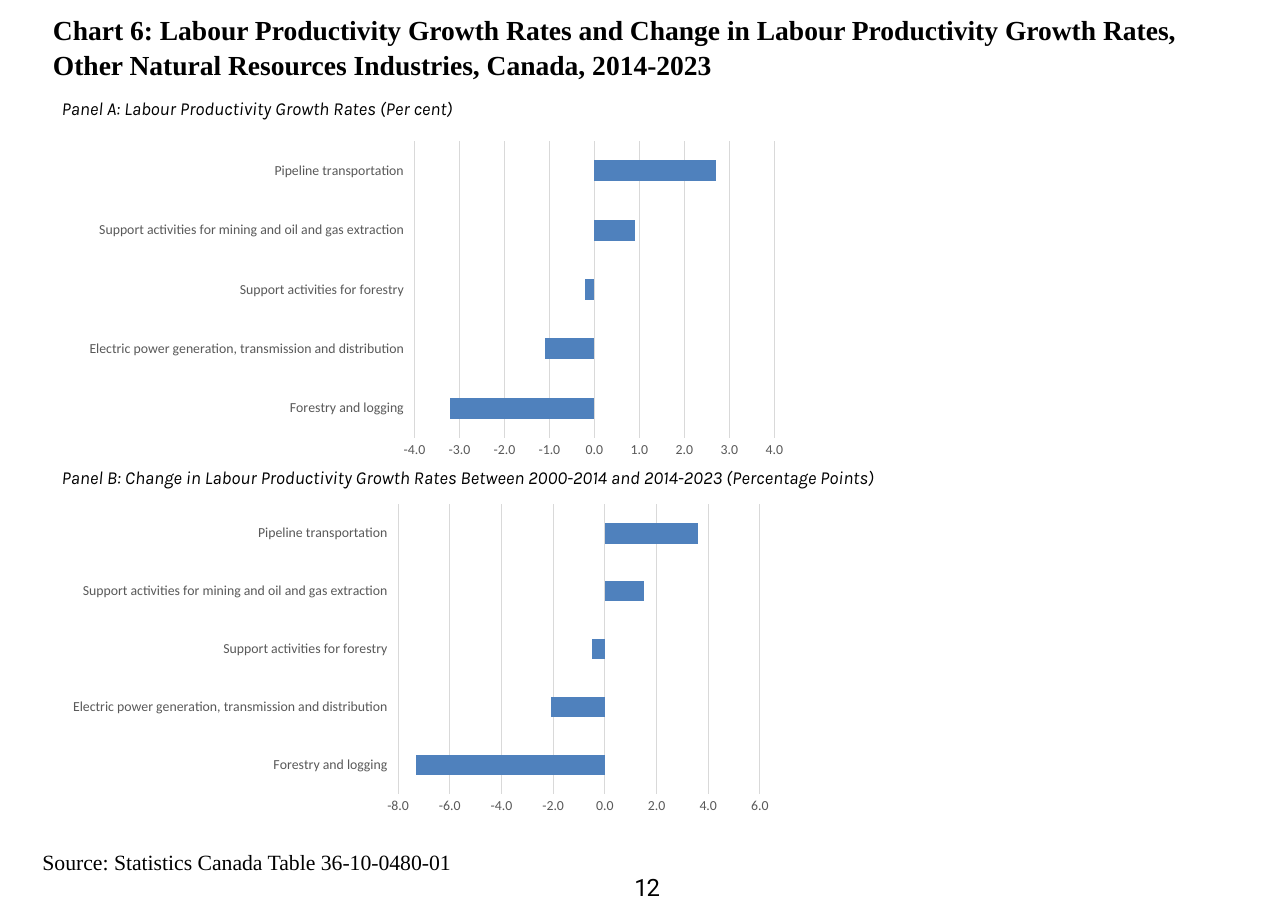
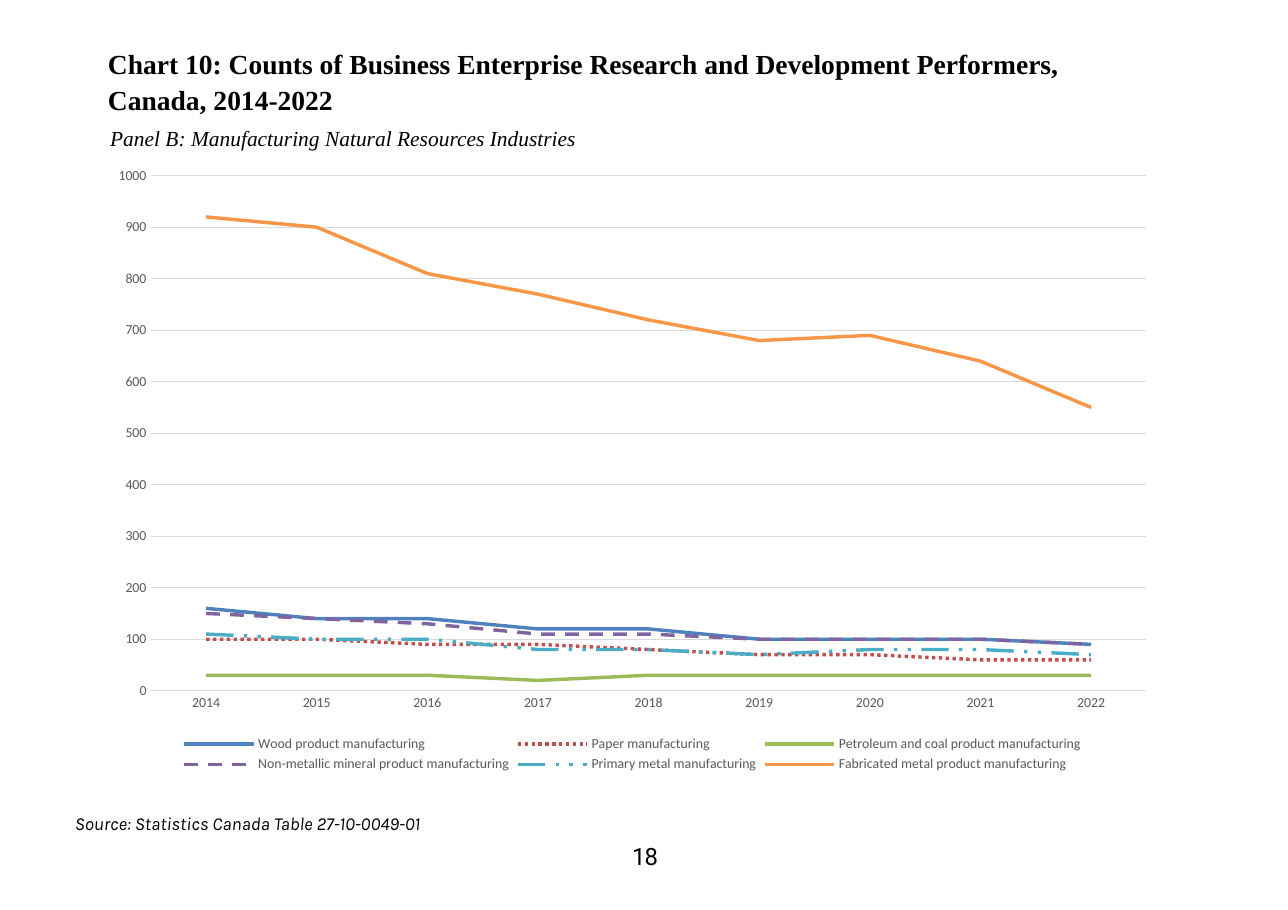
from pptx import Presentation
from pptx.chart.data import CategoryChartData
from pptx.dml.color import RGBColor
from pptx.enum.chart import XL_CHART_TYPE, XL_LEGEND_POSITION, XL_TICK_LABEL_POSITION, XL_TICK_MARK
from pptx.enum.dml import MSO_LINE
from pptx.enum.text import MSO_ANCHOR, MSO_AUTO_SIZE, PP_ALIGN
from pptx.util import Cm, Pt

BAR, LINE = XL_CHART_TYPE.BAR_CLUSTERED, XL_CHART_TYPE.LINE
LOW, NO_TICK = XL_TICK_LABEL_POSITION.LOW, XL_TICK_MARK.NONE
BOTTOM = XL_LEGEND_POSITION.BOTTOM
SOLID, DOT, DASH, DASH_DOTS = (MSO_LINE.SOLID, MSO_LINE.ROUND_DOT, MSO_LINE.DASH,
                               MSO_LINE.DASH_DOT_DOT)
TOP, LEFT, NO_FIT = MSO_ANCHOR.TOP, PP_ALIGN.LEFT, MSO_AUTO_SIZE.NONE

COLORS = {
    "text": "000000", "label": "595959", "grid": "D9D9D9", "background": "FFFFFF",
    "blue": "4F81BD", "red": "C0504D", "green": "9BBB59",
    "purple": "8064A2", "teal": "4BACC6", "orange": "F79646",
}
PALETTE = {name: RGBColor.from_string(value) for name, value in COLORS.items()}

# Font name, size, bold, italic, line spacing, letter spacing
TITLE = ("Times New Roman", 18, True, False, 1.07, 0)
PANEL = ("Karla", 12, False, True, 1.07, 0)
PANEL_SERIF = ("Times New Roman", 14, False, True, 1.07, 0)
SOURCE_SERIF = ("Times New Roman", 14.2, False, False, 1, 0)
PAGE_NUMBER = ("Roboto", 15.6, False, False, 1, -70)
PADDED, FLUSH = (0.25, 0.13), (0, 0.04)


def write(shape, box, text, style, inset):
    """Place a text shape, fill it and format its only paragraph."""
    shape.left, shape.top, shape.width, shape.height = (Cm(length) for length in box)
    font_name, size, bold, italic, line_spacing, letter_spacing = style
    frame = shape.text_frame
    frame.text = text
    frame.word_wrap = True
    frame.auto_size = NO_FIT
    frame.vertical_anchor = TOP
    frame.margin_left = frame.margin_right = Cm(inset[0])
    frame.margin_top = frame.margin_bottom = Cm(inset[1])
    paragraph = frame.paragraphs[0]
    paragraph.alignment = LEFT
    paragraph.line_spacing = line_spacing
    run = paragraph.runs[0]
    run.font.name, run.font.size = font_name, Pt(size)
    run.font.bold, run.font.italic = bold, italic
    run.font.color.rgb = PALETTE["text"]
    if letter_spacing:
        run.font._element.set("spc", str(letter_spacing))


def add_styled_chart(slide, kind, box, categories, series, value_range):
    """Add a chart with pale gridlines; value_range is minimum, maximum, step."""
    data = CategoryChartData()
    data.categories = categories
    for name, values in series:
        data.add_series(name, values)
    chart = slide.shapes.add_chart(kind, *(Cm(length) for length in box), data).chart
    chart.has_title = False
    chart.has_legend = False
    chart.font.name, chart.font.size = "Calibri", Pt(9)
    chart.font.color.rgb = PALETTE["label"]
    chart.plots[0].vary_by_categories = False
    value_axis, category_axis = chart.value_axis, chart.category_axis
    value_axis.minimum_scale, value_axis.maximum_scale, value_axis.major_unit = value_range
    value_axis.has_major_gridlines = True
    value_axis.format.line.fill.background()
    for axis in (value_axis, category_axis):
        axis.major_tick_mark = axis.minor_tick_mark = NO_TICK
    for line in (value_axis.major_gridlines.format.line, category_axis.format.line):
        line.color.rgb = PALETTE["grid"]
        line.width = Pt(0.75)
    return chart


prs = Presentation()
prs.slide_width, prs.slide_height = Cm(29.7), Cm(20.98)
title_only = prs.slide_layouts[5]
background = prs.slide_master.background.fill
background.solid()
background.fore_color.rgb = PALETTE["background"]

# Text of both slides: title first, then the text boxes
slide_texts = [
    [
        ((1.22, 0.2, 27.28, 1.63),
         "Chart 6: Labour Productivity Growth Rates and Change in Labour Productivity "
         "Growth Rates, Other Natural Resources Industries, Canada, 2014-2023",
         TITLE, FLUSH),
        ((1.17, 2.08, 14.86, 0.79),
         "Panel A: Labour Productivity Growth Rates (Per cent)", PANEL, PADDED),
        ((1.17, 10.59, 21.72, 0.79),
         "Panel B: Change in Labour Productivity Growth Rates Between 2000-2014 and "
         "2014-2023 (Percentage Points)", PANEL, PADDED),
        ((0.98, 19.53, 15, 0.66),
         "Source: Statistics Canada Table 36-10-0480-01", SOURCE_SERIF, FLUSH),
        ((14.63, 20.12, 0.8, 0.66), "12", PAGE_NUMBER, (0, 0)),
    ],
    [
        ((2.24, 0.91, 22.45, 3.18),
         "Chart 10: Counts of Business Enterprise Research and Development Performers, "
         "Canada, 2014-2022", TITLE, PADDED),
        ((2.29, 2.72, 14.86, 0.86),
         "Panel B: Manufacturing Natural Resources Industries", PANEL_SERIF, PADDED),
        ((1.73, 18.64, 15, 0.58),
         "Source: Statistics Canada Table 27-10-0049-01", PANEL, FLUSH),
        ((14.58, 19.41, 0.8, 0.66), "18", PAGE_NUMBER, (0, 0)),
    ],
]
slides = []
for title, *boxes in slide_texts:
    slide = prs.slides.add_slide(title_only)
    write(slide.shapes.title, *title)
    for box, text, style, inset in boxes:
        textbox = slide.shapes.add_textbox(*(Cm(length) for length in box))
        write(textbox, box, text, style, inset)
    slides.append(slide)
productivity, performers = slides

# Productivity growth: two bar panels over the same industries
resource_industries = [
    "Forestry and logging",
    "Electric power generation, transmission and distribution",
    "Support activities for forestry",
    "Support activities for mining and oil and gas extraction",
    "Pipeline transportation",
]
growth_panels = [
    ((1.73, 3.1, 16.66, 7.62), (-3.2, -1.1, -0.2, 0.9, 2.7), (-4, 4, 1)),
    ((1.35, 11.48, 16.71, 7.44), (-7.3, -2.1, -0.5, 1.5, 3.6), (-8, 6, 2)),
]
for box, growth_rates, value_range in growth_panels:
    chart = add_styled_chart(productivity, BAR, box, resource_industries,
                             [("Series 1", growth_rates)], value_range)
    chart.category_axis.tick_label_position = LOW
    chart.value_axis.tick_labels.number_format = "0.0"
    chart.value_axis.tick_labels.number_format_is_linked = False
    chart.plots[0].gap_width = 182
    bars = chart.plots[0].series[0]
    bars.invert_if_negative = False
    bars.format.fill.solid()
    bars.format.fill.fore_color.rgb = PALETTE["blue"]

# Research performers: one line per manufacturing industry
years = [str(year) for year in range(2014, 2023)]
performer_counts = [
    ("Wood product manufacturing", (160, 140, 140, 120, 120, 100, 100, 100, 90)),
    ("Paper manufacturing", (100, 100, 90, 90, 80, 70, 70, 60, 60)),
    ("Petroleum and coal product manufacturing", (30, 30, 30, 20, 30, 30, 30, 30, 30)),
    ("Non-metallic mineral product manufacturing",
     (150, 140, 130, 110, 110, 100, 100, 100, 90)),
    ("Primary metal manufacturing", (110, 100, 100, 80, 80, 70, 80, 80, 70)),
    ("Fabricated metal product manufacturing",
     (920, 900, 810, 770, 720, 680, 690, 640, 550)),
]
line_styles = [("blue", SOLID), ("red", DOT), ("green", SOLID),
               ("purple", DASH), ("teal", DASH_DOTS), ("orange", SOLID)]
chart = add_styled_chart(performers, LINE, (2.24, 3.58, 24.69, 14.33), years,
                         performer_counts, (0, 1000, 100))
chart.has_legend = True
chart.legend.position = BOTTOM
chart.legend.include_in_layout = False
for industry, (color, dash) in zip(chart.plots[0].series, line_styles):
    industry.smooth = False
    industry.format.line.color.rgb = PALETTE[color]
    industry.format.line.width = Pt(2.25)
    industry.format.line.dash_style = dash

prs.save("out.pptx")
